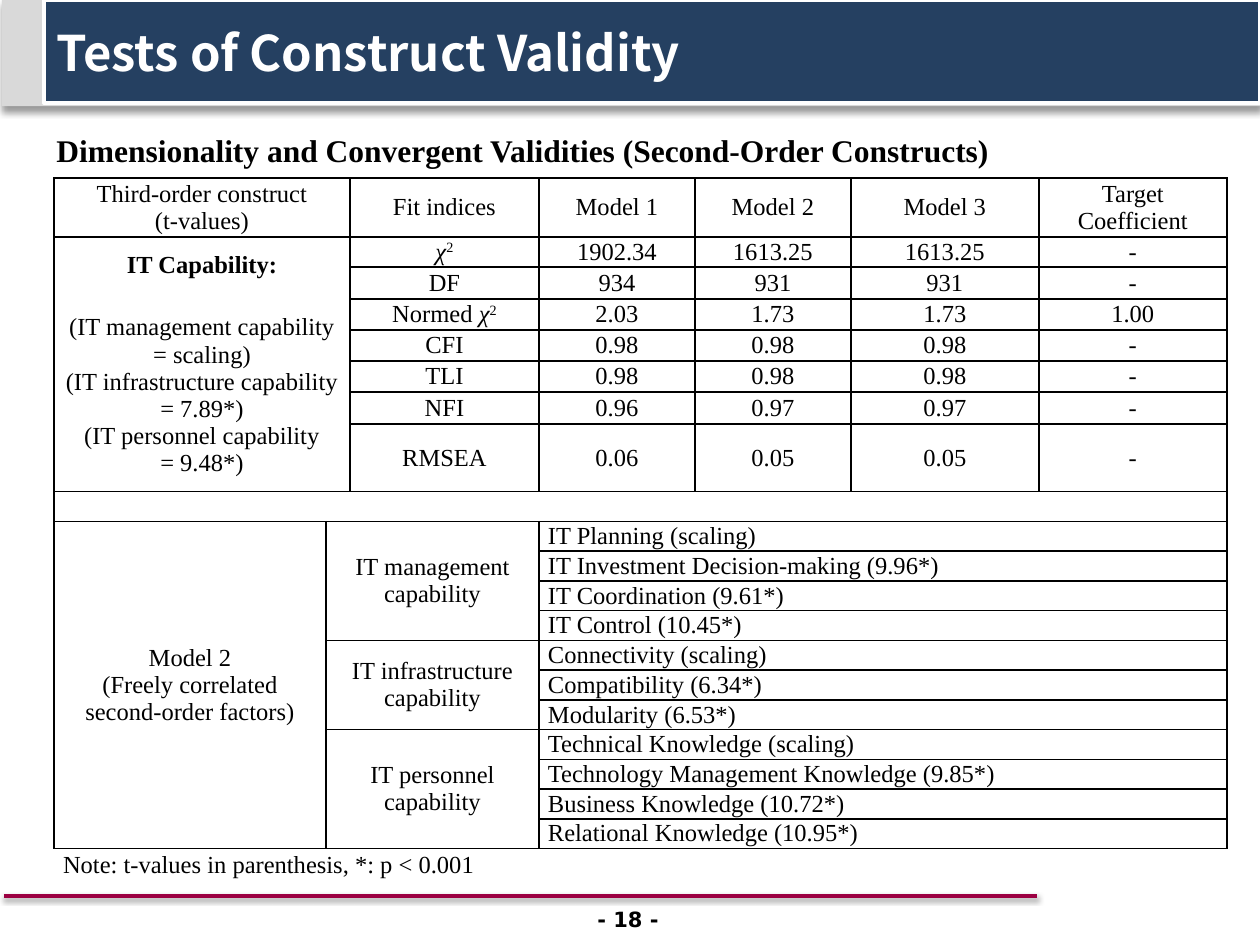
from lxml import etree
from pptx import Presentation
from pptx import util as u
from pptx.dml.color import RGBColor
from pptx.enum import shapes, text
from pptx.oxml import ns

PX = 914400 / 126
SERIF = "Times New Roman"
CENTER, JUSTIFY = text.PP_ALIGN.CENTER, text.PP_ALIGN.JUSTIFY
COLUMNS = [272, 24, 189, 156, 156, 188, 188]
ROWS = [59, 30, 32, 31, 31, 31, 32, 68, 30] + [29, 30] * 5 + [29, 33]
HEADINGS = ["Fit indices", "Model 1", "Model 2", "Model 3", "Target Coefficient"]
FIT_INDICES = [
    ["χ2", "1902.34", "1613.25", "1613.25", "-"],
    ["DF", "934", "931", "931", "-"],
    ["Normed χ2", "2.03", "1.73", "1.73", "1.00"],
    ["CFI", "0.98", "0.98", "0.98", "-"],
    ["TLI", "0.98", "0.98", "0.98", "-"],
    ["NFI", "0.96", "0.97", "0.97", "-"],
    ["RMSEA", "0.06", "0.05", "0.05", "-"],
]
CAPABILITY = [
    "IT Capability:",
    "(IT management capability = scaling)",
    "(IT infrastructure capability = 7.89*)",
    "(IT personnel capability",
    "= 9.48*)",
]
FACTORS = {
    "IT management capability": [
        "IT Planning (scaling)", "IT Investment Decision-making (9.96*)",
        "IT Coordination (9.61*)", "IT Control (10.45*)"],
    "IT infrastructure capability": [
        "Connectivity (scaling)", "Compatibility (6.34*)", "Modularity (6.53*)"],
    "IT personnel capability": [
        "Technical Knowledge (scaling)", "Technology Management Knowledge (9.85*)",
        "Business Knowledge (10.72*)", "Relational Knowledge (10.95*)"],
}


def px(length):
    """Turn pixels into EMU."""
    return u.Emu(round(length * PX))


def color(hex_value):
    """Turn a hex string into a colour."""
    return RGBColor.from_string(hex_value)


def style_run(run, size, face, hex_value="000000", bold=False):
    """Set the font of one run."""
    font = run.font
    font.size, font.name, font.bold = u.Pt(size), face, bold
    font.color.rgb = color(hex_value)


def add_shadow(shape, alpha, blur, distance):
    """Give a shape a soft black shadow falling downwards."""
    effects = etree.SubElement(shape.element.spPr, ns.qn("a:effectLst"))
    shadow = etree.SubElement(
        effects, ns.qn("a:outerShdw"), blurRad=str(u.Pt(blur)),
        dist=str(u.Pt(distance)), dir="5400000", algn="t", rotWithShape="0")
    black = etree.SubElement(shadow, ns.qn("a:srgbClr"), val="000000")
    etree.SubElement(black, ns.qn("a:alpha"), val=str(alpha * 1000))


def add_label(slide, box, wording, size, face, align=None):
    """Place a bold one-line label in a box."""
    label = slide.shapes.add_textbox(*map(px, box))
    label.text_frame.word_wrap = True
    label.text_frame.text = wording
    paragraph = label.text_frame.paragraphs[0]
    paragraph.alignment = align
    style_run(paragraph.runs[0], size, face, bold=True)


def add_header(slide, box):
    """Place the grey band and the slide title on it."""
    left, top, width, height = box
    title = slide.shapes.title
    band = slide.shapes.add_shape(
        shapes.MSO_SHAPE.ROUNDED_RECTANGLE, *map(px, box))
    band.adjustments[0] = 0
    band.fill.solid()
    band.fill.fore_color.rgb = color("D9D9D9")
    band.line.fill.background()
    add_shadow(band, 40, 4, 3)
    title.element.addprevious(band.element)

    title.left, title.top = px(left + 42), px(top + 1)
    title.width, title.height = px(width - 44), px(height - 4)
    title.fill.solid()
    title.fill.fore_color.rgb = color("254061")
    title.line.color.rgb = color("FFFFFF")
    title.line.width = u.Pt(2.25)
    frame = title.text_frame
    frame.text = "Tests of Construct Validity"
    frame.word_wrap = False
    frame.auto_size = text.MSO_AUTO_SIZE.NONE
    frame.vertical_anchor = text.MSO_ANCHOR.MIDDLE
    frame.paragraphs[0].alignment = text.PP_ALIGN.LEFT
    style_run(frame.paragraphs[0].runs[0], 28, "Noto Sans CJK KR", "FFFFFF", True)


def add_footer(slide, box):
    """Place the rule and the page number."""
    left, top, width, height = box
    rule = slide.shapes.add_connector(
        shapes.MSO_CONNECTOR.STRAIGHT, px(left), px(top), px(left + width), px(top))
    rule.line.color.rgb = color("9C0042")
    rule.line.width = u.Pt(2)
    add_shadow(rule, 38, 3.1, 1.6)
    add_label(slide, (left + 477, top + 4, 294, height - 4),
              "- 18 -", 12, "DejaVu Sans", CENTER)


def format_cell(cell, sides):
    """Clear the fill, set the margins and rule the given sides."""
    cell.margin_left = cell.margin_right = px(9)
    cell.margin_top = cell.margin_bottom = 0
    cell.vertical_anchor = text.MSO_ANCHOR.MIDDLE
    properties = cell._tc.get_or_add_tcPr()
    for side in "LRTB":
        border = etree.SubElement(properties, ns.qn("a:ln" + side), w=str(u.Pt(1)))
        if side in sides:
            fill = etree.SubElement(border, ns.qn("a:solidFill"))
            etree.SubElement(fill, ns.qn("a:srgbClr"), val="000000")
        else:
            etree.SubElement(border, ns.qn("a:noFill"))
    cell.fill.background()
    etree.SubElement(cell.text_frame.paragraphs[0]._p,
                     ns.qn("a:endParaRPr"), sz="1400")


def write_cell(cell, wording, align=CENTER):
    """Write a cell, with the exponent of a chi-square raised."""
    cell.text_frame.text = wording
    for paragraph in cell.text_frame.paragraphs:
        paragraph.alignment = align
        if paragraph.text.endswith("χ2"):
            prefix = paragraph.text[:-2]
            paragraph.clear()
            for part in filter(None, (prefix, "χ", "2")):
                paragraph.add_run().text = part
            chi, exponent = paragraph.runs[-2:]
            chi.font.italic = True
            exponent.font._element.set("baseline", "30000")
        for run in paragraph.runs:
            style_run(run, 14, SERIF)


def add_validity_table(slide, box):
    """Place the table of fit indices and second-order factors."""
    table = slide.shapes.add_table(len(ROWS), len(COLUMNS), *map(px, box)).table
    table.first_row = table.horz_banding = False
    for column, width in zip(table.columns, COLUMNS):
        column.width = px(width)
    for row, height in zip(table.rows, ROWS):
        row.height = px(height)
    note_row = len(ROWS) - 1
    for index, row in enumerate(table.rows):
        for cell in row.cells:
            format_cell(cell, "T" if index == note_row else "LRTB")

    def span(top, left, bottom, right, wording="", align=CENTER):
        """Merge a block of cells and write it."""
        table.cell(top, left).merge(table.cell(bottom, right))
        if wording:
            write_cell(table.cell(top, left), wording, align)

    span(0, 0, 0, 1, "Third-order construct\n(t-values)")
    for row, values in enumerate([HEADINGS] + FIT_INDICES):
        for column, value in enumerate(values, 2):
            write_cell(table.cell(row, column), value)
    span(1, 0, 7, 1, "\n".join(CAPABILITY))
    heading = table.cell(1, 0).text_frame.paragraphs[0]
    heading.runs[0].font.bold = True
    heading.space_after = u.Pt(20)
    span(8, 0, 8, 6)
    span(9, 0, note_row - 1, 0,
         "Model 2\n(Freely correlated second-order factors)")
    row = 9
    for factor, items in FACTORS.items():
        span(row, 1, row + len(items) - 1, 2, factor)
        for item in items:
            span(row, 3, row, 6, item, JUSTIFY)
            row += 1
    span(note_row, 0, note_row, 6,
         "Note: t-values in parenthesis, *: p < 0.001", JUSTIFY)


def main():
    """Build and save the slide."""
    deck = Presentation()
    deck.slide_width, deck.slide_height = px(1260), px(945)
    slide = deck.slides.add_slide(deck.slide_layouts[5])
    add_header(slide, (2, -1, 1260, 107))
    add_footer(slide, (4, 896, 1033, 39))
    add_label(slide, (44, 125, 1201, 50),
              "Dimensionality and Convergent Validities (Second-Order Constructs)",
              18, SERIF)
    add_validity_table(slide, (54, 178, sum(COLUMNS), sum(ROWS)))
    deck.save("out.pptx")


if __name__ == "__main__":
    main()
